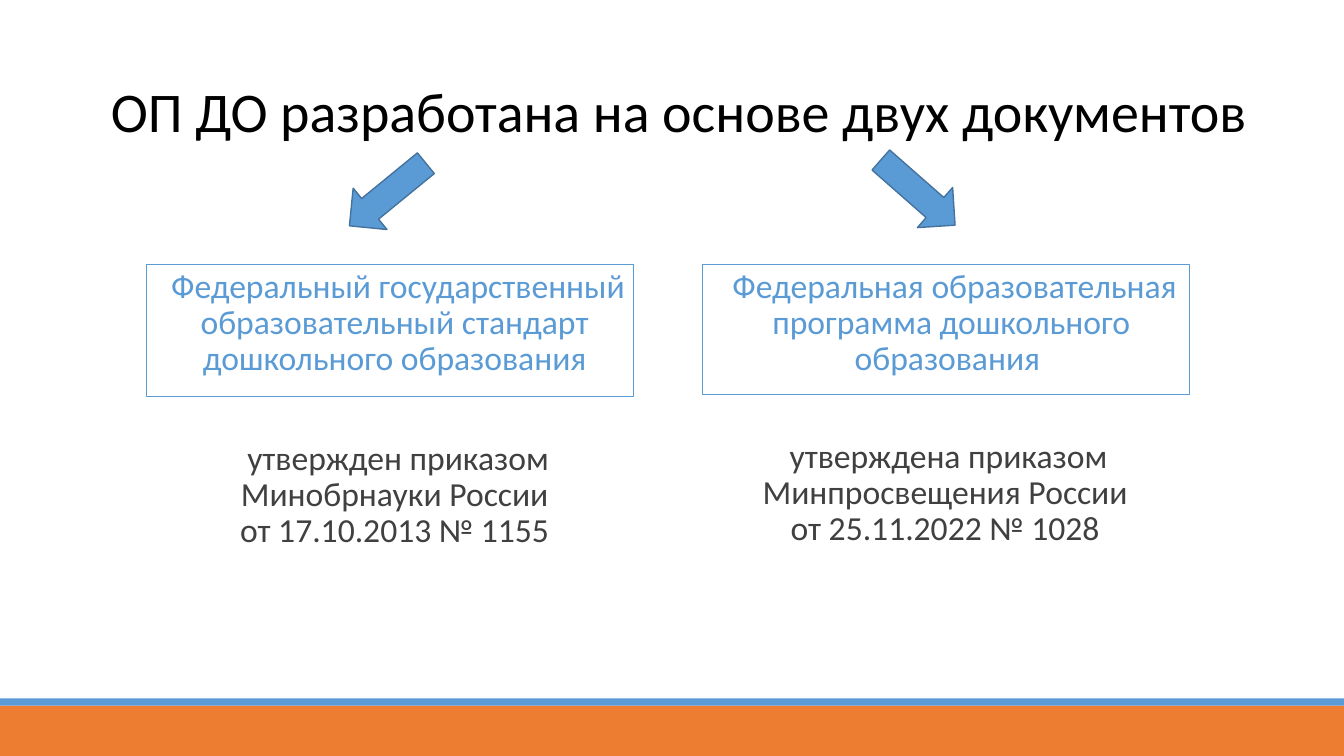
from lxml import etree
from pptx import Presentation
from pptx import util as u
from pptx.dml.color import RGBColor
from pptx.enum import shapes, text
from pptx.oxml.ns import qn

BLUE = RGBColor(0x5B, 0x9B, 0xD5)
DARK_BLUE = RGBColor(0x43, 0x73, 0x9E)
ORANGE = RGBColor(0xED, 0x7D, 0x31)
GREY = RGBColor(0x40, 0x40, 0x40)
BLACK = RGBColor(0, 0, 0)
FONT = "Calibri"


def inches(*lengths):
    return [u.Inches(length) for length in lengths]


def add_run(paragraph, words, size, color):
    run = paragraph.add_run()
    run.text = words
    run.font.name = FONT
    run.font.size = u.Pt(size)
    run.font.color.rgb = color


def add_blank_bullet(paragraph):
    """Give the paragraph a hanging indent with a blank bullet character."""
    properties = paragraph._p.get_or_add_pPr()
    properties.set("marL", str(u.Inches(0.1)))
    properties.set("indent", str(-u.Inches(0.1)))
    bullet_color = etree.SubElement(properties, qn("a:buClr"))
    etree.SubElement(bullet_color, qn("a:srgbClr"), val=str(BLUE))
    etree.SubElement(properties, qn("a:buChar"), char=" ")


def add_title(slide, words):
    title = slide.shapes.title
    title.left, title.top, title.width, title.height = inches(1, 0.71, 11.63, 0.77)
    frame = title.text_frame
    frame.word_wrap = True
    frame.vertical_anchor = text.MSO_ANCHOR.TOP
    paragraph = frame.paragraphs[0]
    paragraph.alignment = text.PP_ALIGN.LEFT
    add_run(paragraph, words, 40, BLACK)


def add_text(slide, place, lines, color, outlined=False):
    box = slide.shapes.add_textbox(*inches(*place))
    if outlined:
        box.line.color.rgb = BLUE
        box.line.width = u.Pt(0.75)
    frame = box.text_frame
    frame.word_wrap = True
    frame.margin_left = frame.margin_right = 0
    paragraph = frame.paragraphs[0]
    paragraph.alignment = text.PP_ALIGN.CENTER
    paragraph.line_spacing = 0.9
    paragraph.space_before = u.Pt(12)
    paragraph.space_after = u.Pt(2)
    add_blank_bullet(paragraph)
    for number, line in enumerate(lines):
        if number:
            paragraph.add_line_break()
        add_run(paragraph, line, 24, color)


def add_filled(slide, kind, place, fill, line=None, rotation=0):
    shape = slide.shapes.add_shape(kind, *inches(*place))
    shape.shadow.inherit = False
    shape.rotation = rotation
    shape.fill.solid()
    shape.fill.fore_color.rgb = fill
    if line is None:
        shape.line.fill.background()
    else:
        shape.line.color.rgb = line
        shape.line.width = u.Pt(1)


def main():
    deck = Presentation()
    deck.slide_width, deck.slide_height = inches(13.33, 7.5)
    slide = deck.slides.add_slide(deck.slide_layouts[5])

    # Footer bands
    rectangle = shapes.MSO_SHAPE.RECTANGLE
    add_filled(slide, rectangle, (0, 7, 13.33, 0.5), ORANGE)
    add_filled(slide, rectangle, (0, 6.93, 13.33, 0.07), BLUE)

    add_title(slide, "ОП ДО разработана на основе двух документов")

    # Documents and the orders that approved them
    documents = [
        ((1.45, 2.62, 4.83, 1.31),
         "Федеральный государственный образовательный стандарт дошкольного образования",
         (1.45, 4.33, 4.83, 1.44),
         ["утвержден приказом Минобрнауки России", "от 17.10.2013 № 1155"]),
        ((6.97, 2.62, 4.83, 1.29),
         "Федеральная образовательная программа дошкольного образования ",
         (6.96, 4.31, 4.73, 1.44),
         ["утверждена приказом Минпросвещения России", "от 25.11.2022 № 1028"]),
    ]
    for document_place, document, order_place, order in documents:
        add_text(slide, document_place, [document], BLUE, outlined=True)
        add_text(slide, order_place, order, GREY)

    # Arrows from the title to the documents
    for left, top, rotation in [(3.58, 1.44, 50.7), (8.84, 1.42, 311.3)]:
        add_filled(slide, shapes.MSO_SHAPE.DOWN_ARROW, (left, top, 0.53, 0.98),
                   BLUE, DARK_BLUE, rotation)

    deck.save("out.pptx")


if __name__ == "__main__":
    main()
